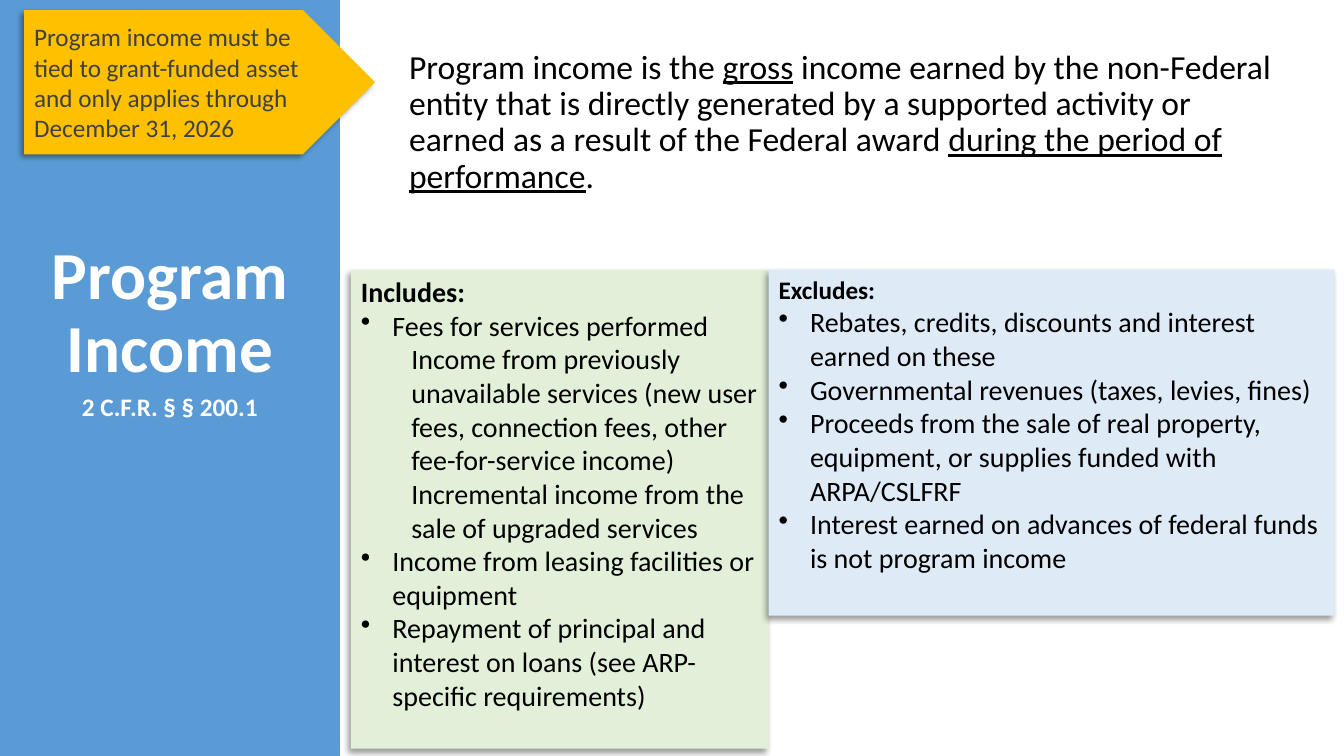
from lxml import etree
from pptx import Presentation
from pptx.dml.color import RGBColor
from pptx.enum.shapes import MSO_SHAPE
from pptx.enum.text import MSO_ANCHOR, MSO_AUTO_SIZE, PP_ALIGN
from pptx.oxml import parse_xml
from pptx.oxml.ns import nsdecls, qn
from pptx.util import Pt

RECTANGLE, PENTAGON = MSO_SHAPE.RECTANGLE, MSO_SHAPE.PENTAGON
TOP, MIDDLE = MSO_ANCHOR.TOP, MSO_ANCHOR.MIDDLE
LEFT, CENTER = PP_ALIGN.LEFT, PP_ALIGN.CENTER
NO_AUTOFIT = MSO_AUTO_SIZE.NONE

FONT = "Calibri"
COLORS = {
    "sidebar": "5B9BD5", "callout": "FFC000", "includes": "E2F0D9",
    "excludes": "DEEBF7", "text": "000000", "callout_text": "404040",
    "white": "FFFFFF",
}
TIGHT = {"line_spacing": 0.9, "space_before": Pt(0), "space_after": Pt(6)}
BULLET_INDENT, DETAIL_INDENT = 22.5, 36

# Panel items: (kind, text)
INCLUDES = [
    ("bullet", "Fees for services performed"),
    ("detail", "Income from previously unavailable services (new user fees, "
               "connection fees, other fee-for-service income)"),
    ("detail", "Incremental income from the sale of upgraded services"),
    ("bullet", "Income from leasing facilities or equipment"),
    ("bullet", "Repayment of principal and interest on loans (see ARP-specific requirements)"),
]
EXCLUDES = [
    ("bullet", "Rebates, credits, discounts and interest earned on these"),
    ("bullet", "Governmental revenues (taxes, levies, fines)"),
    ("bullet", "Proceeds from the sale of real property, equipment, or supplies "
               "funded with ARPA/CSLFRF"),
    ("bullet", "Interest earned on advances of federal funds is not program income"),
]
# Definition runs: (text, underlined)
DEFINITION = [
    ("Program income is the ", False),
    ("gross", True),
    (" income earned by the non-Federal entity that is directly generated by a "
     "supported activity or earned as a result of the Federal award ", False),
    ("during the period of performance", True),
    (". ", False),
]


def set_format(target, values):
    for name, value in values.items():
        setattr(target, name, value)


def place(shape, box):
    set_format(shape, dict(zip(("left", "top", "width", "height"), map(Pt, box))))


def fill_shape(shape, color):
    shape.fill.solid()
    shape.fill.fore_color.rgb = RGBColor.from_string(COLORS[color])


def add_run(paragraph, text, size, color="text", **font_format):
    run = paragraph.add_run()
    run.text = text
    set_format(run.font, {"name": FONT, "size": Pt(size), **font_format})
    run.font.color.rgb = RGBColor.from_string(COLORS[color])


def set_indent(paragraph, margin, hanging=0, bullet=None):
    properties = paragraph._p.get_or_add_pPr()
    properties.set("marL", str(Pt(margin)))
    properties.set("indent", str(Pt(-hanging)))
    mark = etree.SubElement(properties, qn("a:buChar" if bullet else "a:buNone"))
    if bullet:
        mark.set("char", bullet)


def add_shadowed_shape(slide, preset, box, color, anchor):
    shape = slide.shapes.add_shape(preset, *map(Pt, box))
    fill_shape(shape, color)
    shape.line.fill.background()
    shape._element.spPr.append(parse_xml(
        f'<a:effectLst {nsdecls("a")}><a:outerShdw blurRad="{Pt(4)}" dist="{Pt(3)}" '
        'dir="8100000" algn="tr" rotWithShape="0"><a:srgbClr val="000000">'
        '<a:alpha val="40000"/></a:srgbClr></a:outerShdw></a:effectLst>'))
    set_format(shape.text_frame, {"word_wrap": True, "vertical_anchor": anchor})
    return shape


def add_sidebar(slide, box):
    title = slide.shapes.title
    place(title, box)
    fill_shape(title, "sidebar")
    frame = title.text_frame
    set_format(frame, {"word_wrap": True, "auto_size": NO_AUTOFIT,
                       "vertical_anchor": TOP, "margin_top": Pt(172.5)})
    heading, citation = frame.paragraphs[0], frame.add_paragraph()
    for paragraph, text, size in ((heading, "Program Income", 48),
                                  (citation, "2 C.F.R. § § 200.1", 18)):
        set_format(paragraph, {"alignment": CENTER, **TIGHT})
        add_run(paragraph, text, size, "white", bold=True)


def add_definition(slide, box):
    body = slide.placeholders[1]
    place(body, box)
    set_format(body.text_frame, {"word_wrap": True, "auto_size": NO_AUTOFIT,
                                 "vertical_anchor": TOP, "margin_top": Pt(36)})
    paragraph = body.text_frame.paragraphs[0]
    set_format(paragraph, {"alignment": LEFT, **TIGHT})
    set_indent(paragraph, 0)
    for text, underlined in DEFINITION:
        add_run(paragraph, text, 24, underline=underlined)


def add_panel(slide, box, color, heading, heading_size, items):
    frame = add_shadowed_shape(slide, RECTANGLE, box, color, TOP).text_frame
    paragraph = frame.paragraphs[0]
    paragraph.alignment = LEFT
    add_run(paragraph, heading, heading_size, bold=True)
    for kind, text in items:
        paragraph = frame.add_paragraph()
        paragraph.alignment = LEFT
        if kind == "bullet":
            set_indent(paragraph, BULLET_INDENT, BULLET_INDENT, "•")
        else:
            paragraph.level = 1
            set_indent(paragraph, DETAIL_INDENT)
        add_run(paragraph, text, 20, bold=False)


def add_callout(slide, box):
    shape = add_shadowed_shape(slide, PENTAGON, box, "callout", MIDDLE)
    paragraph = shape.text_frame.paragraphs[0]
    paragraph.alignment = LEFT
    add_run(paragraph, "Program income must be tied to grant-funded asset and only "
                       "applies through December 31, 2026", 18, "callout_text")


def main():
    presentation = Presentation()
    set_format(presentation, {"slide_width": Pt(960), "slide_height": Pt(540)})
    slide = presentation.slides.add_slide(presentation.slide_layouts[1])

    # Title sidebar and definition
    add_sidebar(slide, (0, 0, 242.8, 540))
    add_definition(slide, (285, 0, 636.5, 144))

    # Side-by-side panels
    add_panel(slide, (250.7, 192.7, 298.3, 342), "includes", "Includes:", 20, INCLUDES)
    add_panel(slide, (549, 192.7, 404.3, 247), "excludes", "Excludes:", 18, EXCLUDES)

    # Arrow over the sidebar
    add_callout(slide, (17.3, 7.2, 250.5, 103))

    presentation.save("out.pptx")


if __name__ == "__main__":
    main()
